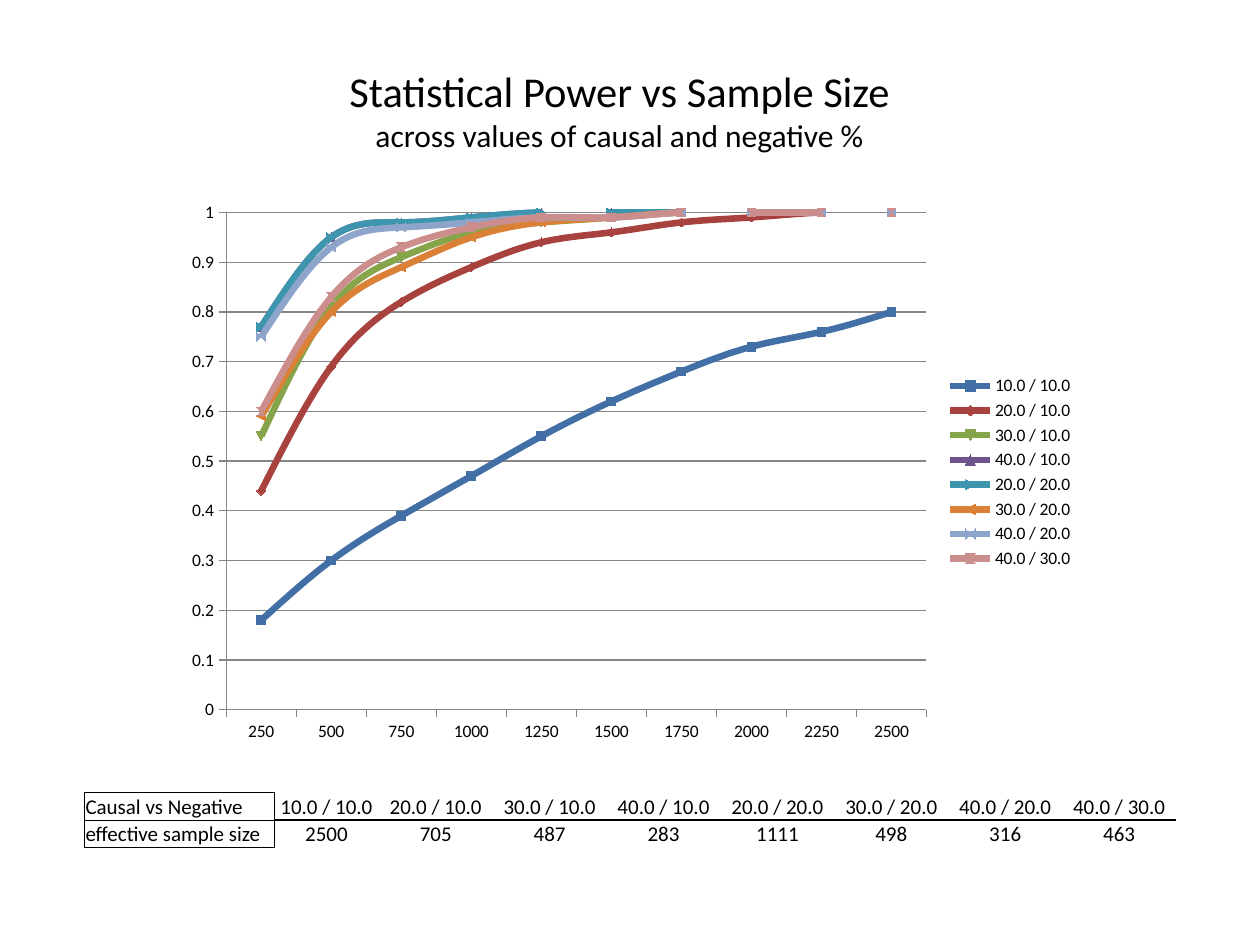
from dataclasses import dataclass

from lxml.etree import SubElement
from pptx import Presentation
from pptx.chart.data import CategoryChartData
from pptx.dml.color import RGBColor as Color
from pptx.enum.chart import XL_CHART_TYPE as ChartType
from pptx.enum.chart import XL_LEGEND_POSITION as LegendPosition
from pptx.enum.chart import XL_TICK_MARK as TickMark
from pptx.enum.text import MSO_ANCHOR as Anchor
from pptx.enum.text import PP_ALIGN as Align
from pptx.oxml.ns import qn
from pptx.util import Pt


@dataclass(frozen=True)
class Theme:
    font: str = "Calibri"
    ink: str = "000000"
    grid: str = "868686"
    lines: tuple = ("416FA6", "A8423F", "86A44A", "6E548D",
                    "3D96AE", "DA8137", "8EA5CB", "CC8E8D")
    title: float = 24.3
    subtitle: float = 18
    table: float = 12
    chart: float = 10


THEME = Theme()

SAMPLE_SIZES = range(250, 2501, 250)

# Causal / negative %: effective sample size, power at each sample size
POWER = {
    "10.0 / 10.0": (2500, (0.18, 0.3, 0.39, 0.47, 0.55, 0.62, 0.68, 0.73, 0.76, 0.8)),
    "20.0 / 10.0": (705, (0.44, 0.69, 0.82, 0.89, 0.94, 0.96, 0.98, 0.99, 1, 1)),
    "30.0 / 10.0": (487, (0.55, 0.81, 0.91, 0.96, 0.98, 0.99, 1, 1, 1, 1)),
    "40.0 / 10.0": (283, (0.77, 0.95, 0.98, 0.99, 1, 1, 1, 1, 1, 1)),
    "20.0 / 20.0": (1111, (0.77, 0.95, 0.98, 0.99, 1, 1, 1, 1, 1, 1)),
    "30.0 / 20.0": (498, (0.59, 0.8, 0.89, 0.95, 0.98, 0.99, 1, 1, 1, 1)),
    "40.0 / 20.0": (316, (0.75, 0.93, 0.97, 0.98, 0.99, 0.99, 1, 1, 1, 1)),
    "40.0 / 30.0": (463, (0.6, 0.83, 0.93, 0.97, 0.99, 0.99, 1, 1, 1, 1)),
}


def format_font(font, size, color=THEME.ink):
    font.name = THEME.font
    font.size = Pt(size)
    font.bold = False
    font.color.rgb = Color.from_string(color)


def write(para, text, *, size, align=Align.LEFT):
    para.alignment = align
    span = para.add_run()
    span.text = text
    format_font(span.font, size)


def add_title(slide, title, subtitle):
    box = slide.shapes.title
    box.left, box.top, box.width, box.height = Pt(54), Pt(38), Pt(600), Pt(49)
    box.text_frame.vertical_anchor = Anchor.MIDDLE
    para = box.text_frame.paragraphs[0]
    write(para, title, size=THEME.title, align=Align.CENTER)
    para.add_line_break()
    write(para, subtitle, size=THEME.subtitle, align=Align.CENTER)


def format_line(line, color, width):
    line.color.rgb = Color.from_string(color)
    line.width = Pt(width)


def add_power_chart(slide):
    data = CategoryChartData()
    data.categories = SAMPLE_SIZES
    for name, (_, powers) in POWER.items():
        data.add_series(name, powers)
    chart = slide.shapes.add_chart(ChartType.LINE_MARKERS, Pt(99.4), Pt(109.4),
                                   Pt(521.3), Pt(321), data).chart
    format_font(chart.font, THEME.chart)
    chart.has_title = False
    chart.has_legend = True
    chart.legend.position = LegendPosition.RIGHT
    chart.legend.include_in_layout = False

    # Axes
    for axis in (chart.category_axis, chart.value_axis):
        axis.major_tick_mark = TickMark.OUTSIDE
        axis.minor_tick_mark = TickMark.NONE
        format_line(axis.format.line, THEME.grid, 0.75)
    values = chart.value_axis
    values.minimum_scale, values.maximum_scale, values.major_unit = 0, 1, 0.1
    values.has_major_gridlines = True
    format_line(values.major_gridlines.format.line, THEME.grid, 0.75)

    # Curves
    plot = chart.plots[0]
    plot.vary_by_categories = False
    for series, color in zip(plot.series, THEME.lines):
        series.smooth = True
        format_line(series.format.line, color, 3.75)
        fill = series.marker.format.fill
        fill.solid()
        fill.fore_color.rgb = Color.from_string(color)


def set_borders(cell, widths):
    """Draw the sides named in widths (L, R, T, B) and clear the others."""
    properties = cell._tc.get_or_add_tcPr()
    for side in "LRTB":
        width = widths.get(side, 0)
        line = SubElement(properties, qn(f"a:ln{side}"), w=str(Pt(width)))
        if width:
            fill = SubElement(line, qn("a:solidFill"))
            SubElement(fill, qn("a:srgbClr"), val=THEME.ink)
        else:
            SubElement(line, qn("a:noFill"))


def border_widths(row, column):
    if column == 0:
        return dict.fromkeys("LRTB", 0.5)
    widths = {"B" if row == 0 else "T": 1}
    if column == 1:
        widths["L"] = 0.5
    return widths


def add_size_table(slide):
    rows = [["Causal vs Negative", *POWER],
            ["effective sample size", *(str(size) for size, _ in POWER.values())]]
    widths = [108.5, 59.8] + [65.1] * (len(POWER) - 1)
    table = slide.shapes.add_table(len(rows), len(widths), Pt(48.2), Pt(453),
                                   Pt(sum(widths)), Pt(31.4)).table
    table.first_row = table.horz_banding = False
    for column, width in zip(table.columns, widths):
        column.width = Pt(width)
    for r, texts in enumerate(rows):
        table.rows[r].height = Pt(15.7)
        for c, text in enumerate(texts):
            cell = table.cell(r, c)
            cell.margin_left = cell.margin_right = cell.margin_top = Pt(0.7)
            cell.margin_bottom = 0
            cell.vertical_anchor = Anchor.MIDDLE if c else Anchor.BOTTOM
            set_borders(cell, border_widths(r, c))
            cell.fill.background()
            write(cell.text_frame.paragraphs[0], text, size=THEME.table,
                  align=Align.CENTER if c else Align.LEFT)


def main():
    deck = Presentation()
    deck.slide_width, deck.slide_height = Pt(720), Pt(540)
    slide = deck.slides.add_slide(deck.slide_layouts[5])  # title only
    add_title(slide, "Statistical Power vs Sample Size",
              "across values of causal and negative %")
    add_power_chart(slide)
    add_size_table(slide)
    deck.save("out.pptx")


if __name__ == "__main__":
    main()
